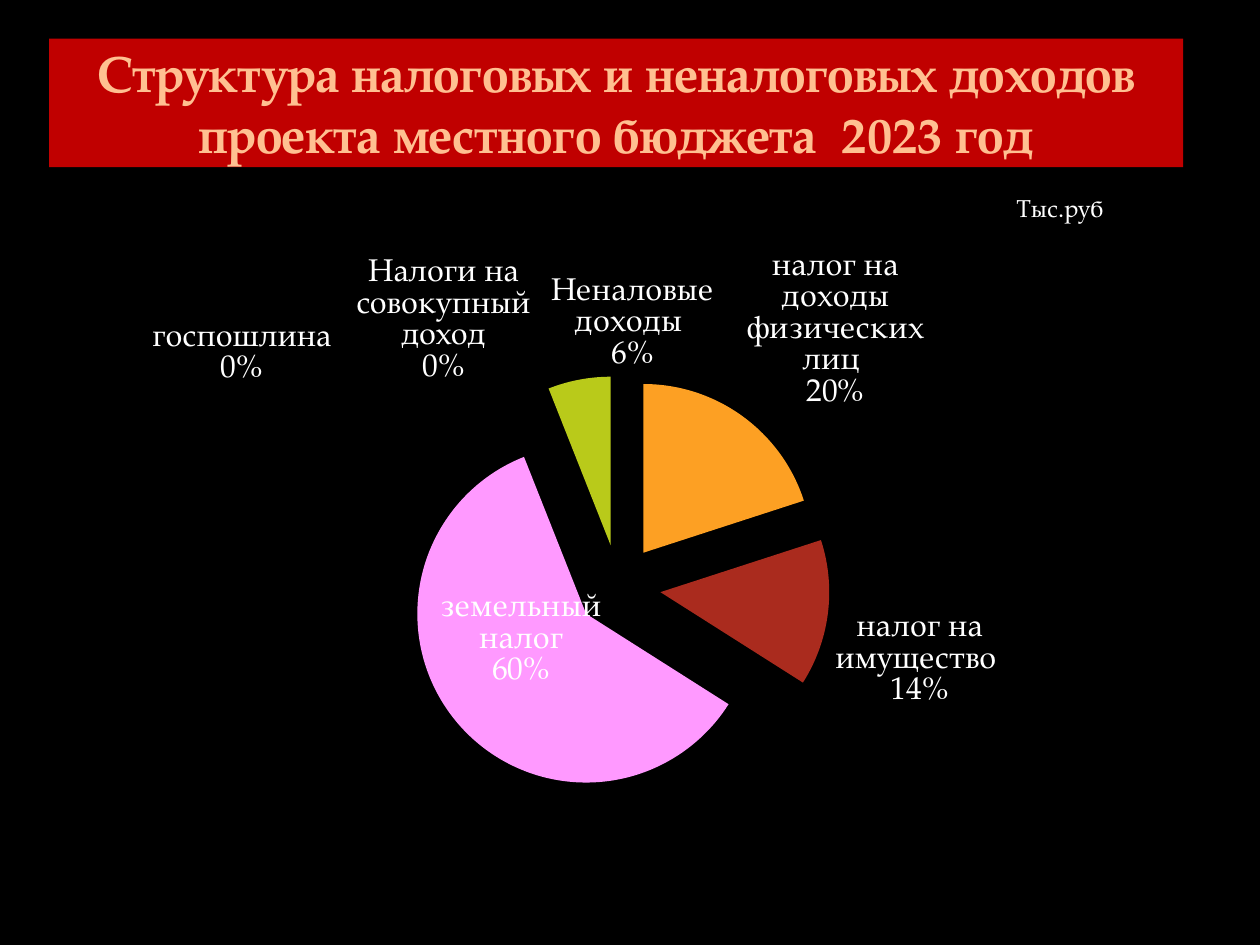
from dataclasses import dataclass

from lxml import etree
from pptx import Presentation
from pptx import util as u
from pptx.chart.data import CategoryChartData
from pptx.dml.color import RGBColor
from pptx.enum import chart as charts, text
from pptx.oxml.ns import qn

FONT = "TeX Gyre Pagella"
WIDTH, HEIGHT = u.Inches(10), u.Inches(7.5)
OUTSIDE = charts.XL_LABEL_POSITION.OUTSIDE_END
CENTER = charts.XL_LABEL_POSITION.CENTER


@dataclass
class Slice:
    name: str
    percent: int
    color: str
    position: charts.XL_LABEL_POSITION = OUTSIDE
    shift: tuple = ()  # label offset as shares of the chart's size


@dataclass
class ZeroLabel:
    """Label of a slice too thin for the chart to label."""
    lines: list
    center: float  # shares of the slide's size
    middle: float


SLICES = [
    Slice("налог на доходы физических лиц ", 20, "FDA023"),
    Slice("налог на имущество ", 14, "AA2B1E"),
    Slice("земельный налог", 60, "FF99FF", CENTER, (0, -0.04)),
    Slice("госпошлина", 0, "64A73B"),
    Slice("Налоги на совокупный доход", 0, "EB5605"),
    Slice("Неналовые доходы ", 6, "B9CA1A", shift=(0.12, 0)),
]
ZERO_LABELS = [
    ZeroLabel(["госпошлина", "0%"], 0.192, 0.373),
    ZeroLabel(["Налоги на", "совокупный", "доход", "0%"], 0.352, 0.338),
]


def rgb(color: str) -> RGBColor:
    return RGBColor.from_string(color)


def area(left: float, top: float, width: float, height: float) -> tuple:
    """Turn shares of the slide's size into lengths."""
    return tuple(round(share * side) for share, side in
                 zip((left, top, width, height), (WIDTH, HEIGHT) * 2))


def set_font(font, size: float, color: str, bold: bool = False) -> None:
    values = {"name": FONT, "size": u.Pt(size), "bold": bold}
    for key, value in values.items():
        setattr(font, key, value)
    font.color.rgb = rgb(color)


def write(shape, lines: list, size: float, color: str, bold: bool = False,
          align=text.PP_ALIGN.LEFT, spacing=None) -> None:
    frame = shape.text_frame
    frame.word_wrap = True
    frame.auto_size = text.MSO_AUTO_SIZE.NONE
    for index, line in enumerate(lines):
        para = frame.add_paragraph() if index else frame.paragraphs[0]
        para.alignment, para.line_spacing = align, spacing
        span = para.add_run()
        span.text = line
        set_font(span.font, size, color, bold)


def add_zero_label(page, label: ZeroLabel) -> None:
    width, height = 0.16, len(label.lines) * 18 / 540
    box = page.shapes.add_textbox(*area(label.center - width / 2,
                                        label.middle - height / 2, width, height))
    frame = box.text_frame
    for side in ("left", "top", "right", "bottom"):
        setattr(frame, f"margin_{side}", 0)
    frame.vertical_anchor = text.MSO_ANCHOR.MIDDLE
    write(box, label.lines, 18, "FFFFFF", align=text.PP_ALIGN.CENTER,
          spacing=u.Pt(18))


def make_layout(**values) -> etree.Element:
    layout = etree.Element(qn("c:layout"))
    manual = etree.SubElement(layout, qn("c:manualLayout"))
    for key, value in values.items():
        etree.SubElement(manual, qn(f"c:{key}")).set("val", str(value))
    return layout


def show_name_and_percent(label) -> None:
    """Set the show flags of a label element."""
    for flag, value in {"showVal": 0, "showCatName": 1, "showPercent": 1}.items():
        for element in label.findall(qn(f"c:{flag}")):
            element.set("val", str(value))


def add_pie(page, place: tuple) -> None:
    data = CategoryChartData()
    data.categories = [part.name for part in SLICES]
    data.add_series("Series 1", [part.percent for part in SLICES])
    chart = page.shapes.add_chart(charts.XL_CHART_TYPE.PIE, *place, data).chart
    chart.has_legend = chart.has_title = False
    set_font(chart.font, 18, "FFFFFF")
    plot = chart.plots[0]
    plot.vary_by_categories = True
    series = plot.series[0]

    # Labels for the whole series
    labels = series.data_labels
    labels.show_category_name = labels.show_percentage = True
    labels.show_value = False
    labels.number_format, labels.number_format_is_linked = "0%", False
    labels.position = OUTSIDE
    set_font(labels.font, 18, "FFFFFF")

    # Slice colours and label places
    for index, part in enumerate(SLICES):
        point = series.points[index]
        point.format.fill.solid()
        point.format.fill.fore_color.rgb = rgb(part.color)
        if part.shift:
            point.data_label.position = part.position
            label = chart.element.xpath(f".//c:dLbl[c:idx/@val='{index}']")[0]
            show_name_and_percent(label)
            x, y = part.shift
            label.insert(1, make_layout(x=x, y=y))

    # Gaps between slices, and the pie's place in the chart
    explosion = etree.Element(qn("c:explosion"), val="25")
    chart.element.xpath(".//c:ser/c:dPt")[0].addprevious(explosion)
    plot_area = chart.element.xpath(".//c:plotArea")[0]
    for old in plot_area.findall(qn("c:layout")):
        plot_area.remove(old)
    plot_area.insert(0, make_layout(layoutTarget="inner", xMode="edge",
                                    yMode="edge", x=0.3, y=0.24, w=0.38, h=0.65))


def main() -> None:
    deck = Presentation()
    deck.slide_width, deck.slide_height = WIDTH, HEIGHT
    page = deck.slides.add_slide(deck.slide_layouts[5])
    page.background.fill.solid()
    page.background.fill.fore_color.rgb = rgb("000000")

    # Title band
    title = page.shapes.title
    title.left, title.top, title.width, title.height = area(0.039, 0.041, 0.9, 0.136)
    title.fill.solid()
    title.fill.fore_color.rgb = rgb("C00000")
    title.text_frame.vertical_anchor = text.MSO_ANCHOR.MIDDLE
    write(title, ["Структура налоговых и неналоговых доходов проекта местного "
                  "бюджета  2023 год"], 28.8, "FFC091", True, text.PP_ALIGN.CENTER)

    # Pie chart, labels of its empty slices, and its unit
    add_pie(page, area(0.05, 0.233, 0.9, 0.687))
    for label in ZERO_LABELS:
        add_zero_label(page, label)
    unit = page.shapes.add_textbox(*area(0.797, 0.198, 0.133, 0.045))
    write(unit, ["Тыс.руб"], 14, "FFFFFF")

    deck.save("out.pptx")


if __name__ == "__main__":
    main()
